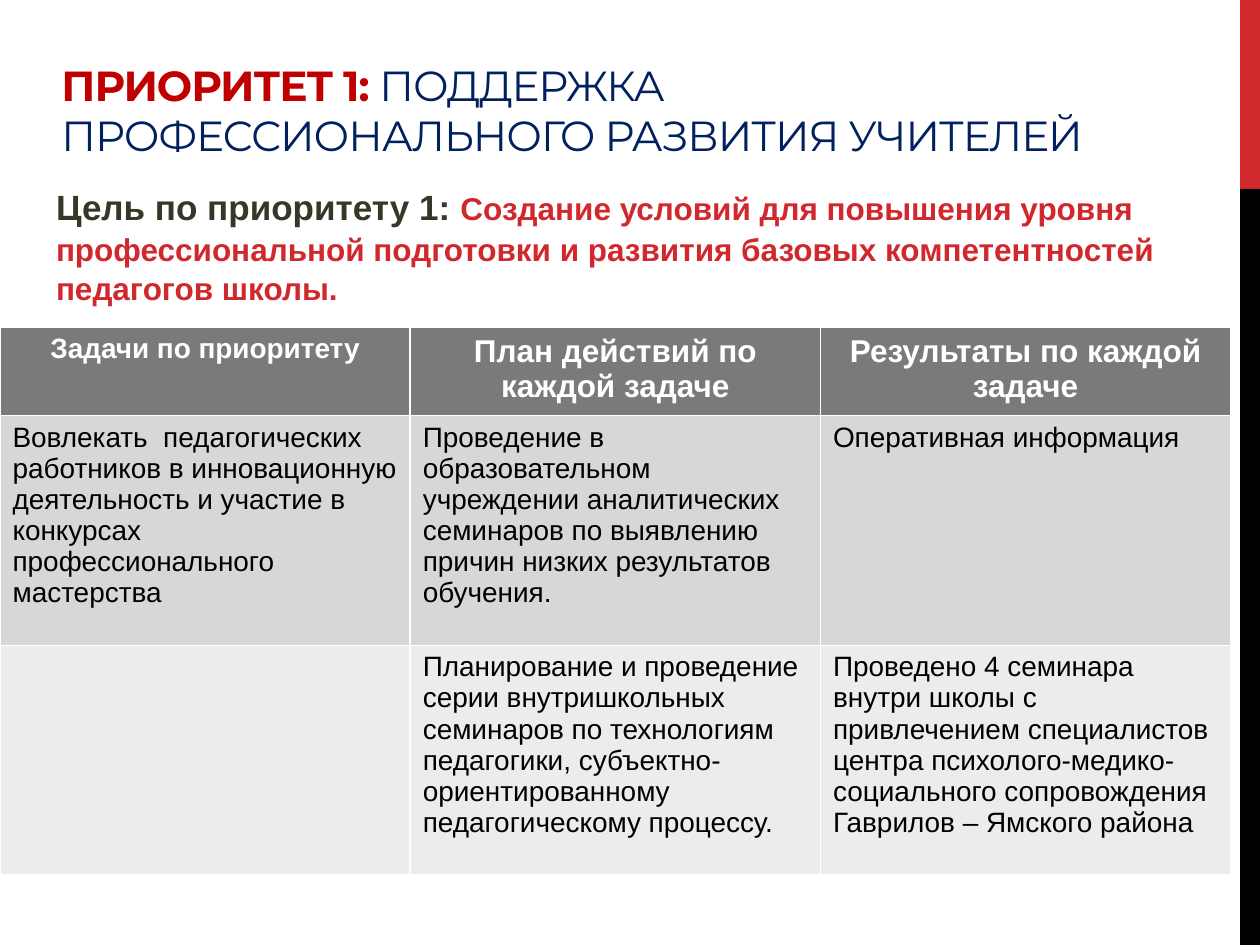
from dataclasses import dataclass

from pptx import Presentation
from pptx.dml.color import RGBColor
from pptx.enum import shapes, text
from pptx.util import Cm, Pt


@dataclass(frozen=True)
class Theme:
    """Colours, fonts and type sizes of the slide."""
    red: str = "D1282E"
    black: str = "000000"
    white: str = "FFFFFF"
    title_red: str = "C00000"
    navy: str = "002060"
    olive: str = "373727"
    header_fill: str = "7A7A7A"
    row_fills: tuple = ("D7D7D7", "ECECEC")
    heading_font: str = "Montserrat"
    body_font: str = "Arial"
    title: int = 24
    lead: int = 20
    goal: int = 18
    body: int = 16


T = Theme()

HEADERS = (
    ("Задачи по приоритету", T.body),
    ("План действий по каждой задаче", T.goal),
    ("Результаты по каждой задаче", T.goal),
)
ROWS = (
    (
        "Вовлекать  педагогических работников в инновационную деятельность "
        "и участие в конкурсах профессионального мастерства",
        "Проведение в образовательном учреждении аналитических семинаров "
        "по выявлению причин низких результатов обучения.",
        "Оперативная информация",
    ),
    (
        "",
        "Планирование и проведение серии внутришкольных семинаров по технологиям  "
        "педагогики, субъектно- ориентированному педагогическому процессу.",
        "Проведено 4 семинара внутри школы с привлечением специалистов центра "
        "психолого-медико-социального сопровождения Гаврилов – Ямского района",
    ),
)


def add_run(p, content, size, color, bold=False, font=T.body_font, spacing=None):
    """Append one formatted run to a paragraph."""
    r = p.add_run()
    r.text = content
    r.font.size = Pt(size)
    r.font.name = font
    r.font.bold = bold
    r.font.color.rgb = RGBColor.from_string(color)
    if spacing is not None:
        r._r.get_or_add_rPr().set("spc", str(spacing))


def add_bar(s, top, height, color):
    """Draw one block of the band on the right edge."""
    sp = s.shapes.add_shape(shapes.MSO_SHAPE.RECTANGLE, Cm(25), Cm(top), Cm(0.4), Cm(height))
    sp.shadow.inherit = False
    sp.fill.solid()
    sp.fill.fore_color.rgb = RGBColor.from_string(color)
    sp.line.fill.background()


def add_text(s, left, top, width, height, anchor):
    """Add a wrapping text box and return its first paragraph."""
    tf = s.shapes.add_textbox(Cm(left), Cm(top), Cm(width), Cm(height)).text_frame
    tf.word_wrap = True
    tf.vertical_anchor = anchor
    return tf.paragraphs[0]


def fill_cell(cell, content, size, color, fill, bold=False, align=text.PP_ALIGN.LEFT):
    """Set the fill and the text of one table cell."""
    cell.fill.solid()
    cell.fill.fore_color.rgb = RGBColor.from_string(fill)
    p = cell.text_frame.paragraphs[0]
    p.alignment = align
    if content:
        add_run(p, content, size, color, bold)


def add_plan_table(s):
    """Build the table of tasks, actions and results."""
    heights = (1.65, 4.63, 4.63)
    table = s.shapes.add_table(
        len(heights), len(HEADERS), Cm(0), Cm(6.6), Cm(24.81), Cm(sum(heights))
    ).table
    for row, height in zip(table.rows, heights):
        row.height = Cm(height)
    for col, (content, size) in enumerate(HEADERS):
        fill_cell(table.cell(0, col), content, size, T.white, T.header_fill,
                  bold=True, align=text.PP_ALIGN.CENTER)
    for i, (row, fill) in enumerate(zip(ROWS, T.row_fills), start=1):
        for col, content in enumerate(row):
            fill_cell(table.cell(i, col), content, T.body, T.black, fill)


def add_title(s):
    """Add the two-colour slide title."""
    p = add_text(s, 0.99, 0, 22.94, 3.35, text.MSO_ANCHOR.BOTTOM)
    add_run(p, "ПРИОРИТЕТ 1:", T.title, T.title_red, True, T.heading_font, -60)
    add_run(p, " ПОДДЕРЖКА ПРОФЕССИОНАЛЬНОГО РАЗВИТИЯ УЧИТЕЛЕЙ",
            T.title, T.navy, False, T.heading_font, -60)


def add_goal(s):
    """Add the goal statement under the title."""
    p = add_text(s, 0.58, 3.58, 24.16, 2.77, text.MSO_ANCHOR.TOP)
    p.line_spacing = 1.05
    p._p.get_or_add_pPr().set("marL", str(Cm(0.3)))
    add_run(p, "Цель по приоритету 1: ", T.lead, T.olive, True)
    add_run(p, "Создание условий для повышения уровня профессиональной подготовки "
            "и развития базовых компетентностей педагогов школы.", T.goal, T.red, True)


def main():
    """Build and save the slide."""
    prs = Presentation()
    prs.slide_width, prs.slide_height = Cm(25.4), Cm(19.05)
    s = prs.slides.add_slide(prs.slide_layouts[6])
    add_bar(s, 0, 3.81, T.red)
    add_bar(s, 3.81, 15.24, T.black)
    add_title(s)
    add_plan_table(s)
    add_goal(s)
    prs.save("out.pptx")


if __name__ == "__main__":
    main()
